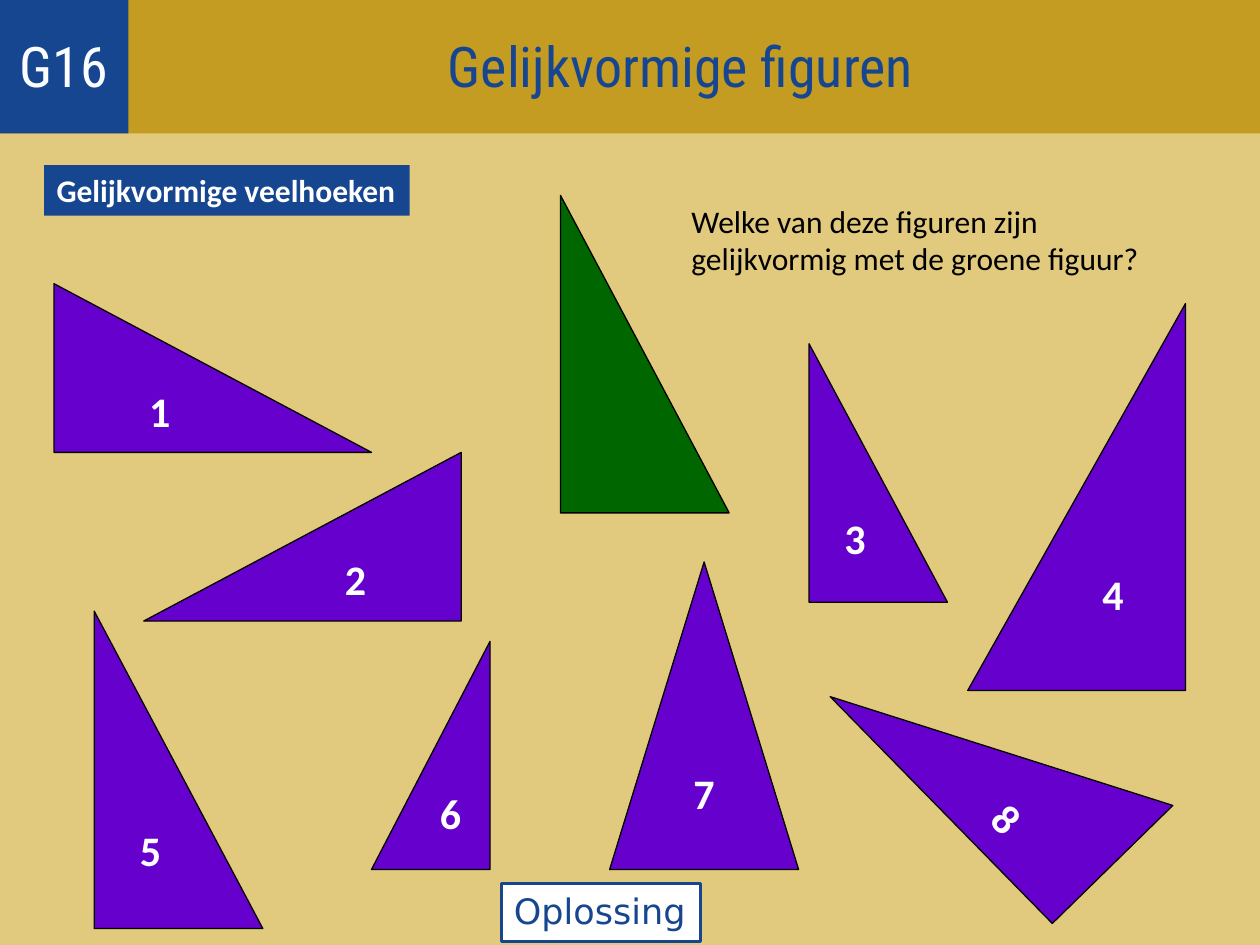
from pptx import Presentation
from pptx.dml.color import RGBColor
from pptx.enum.shapes import MSO_SHAPE
from pptx.enum.text import MSO_ANCHOR, MSO_AUTO_SIZE, PP_ALIGN
from pptx.util import Cm, Pt

NAVY = RGBColor(0x17, 0x46, 0x91)
GOLD = RGBColor(0xC5, 0x9C, 0x22)
SAND = RGBColor(0xE1, 0xCA, 0x7D)
PURPLE = RGBColor(0x66, 0x00, 0xCC)
GREEN = RGBColor(0x00, 0x66, 0x00)
WHITE = RGBColor(0xFF, 0xFF, 0xFF)
OFF_WHITE = RGBColor(0xFC, 0xFD, 0xFE)
BLACK = RGBColor(0x00, 0x00, 0x00)

RIGHT, ISOSCELES = MSO_SHAPE.RIGHT_TRIANGLE, MSO_SHAPE.ISOSCELES_TRIANGLE

TRIANGLES = [
    ("2", RIGHT, (2.9, 9.12, 6.4, 3.4), True, 0),
    ("", RIGHT, (11.3, 3.94, 3.4, 6.4), False, 0),
    ("5", RIGHT, (1.9, 12.32, 3.4, 6.4), False, 0),
    ("4", RIGHT, (19.51, 6.12, 4.39, 7.8), True, 0),
    ("3", RIGHT, (16.31, 6.93, 2.79, 5.21), False, 0),
    ("1", RIGHT, (1.09, 5.72, 6.4, 3.4), False, 0),
    ("7", ISOSCELES, (12.29, 11.33, 3.81, 6.2), False, 0),
    ("6", RIGHT, (7.49, 12.93, 2.39, 4.6), True, 0),
    ("8", RIGHT, (16.99, 13.44, 6.4, 3.4), True, 45.6),
]


def add_text(sp, text, size, font, color, bold=False, align=PP_ALIGN.LEFT,
             anchor=MSO_ANCHOR.TOP, wrap=False, grow=False):
    tf = sp.text_frame
    tf.text = text
    tf.word_wrap = wrap
    tf.vertical_anchor = anchor
    if grow:
        tf.auto_size = MSO_AUTO_SIZE.SHAPE_TO_FIT_TEXT
    for p in tf.paragraphs:
        p.alignment = align
        for r in p.runs:
            r.font.size = Pt(size)
            r.font.name = font
            r.font.bold = bold
            r.font.color.rgb = color


def add_figure(shapes, kind, box, fill, line=None, width=0.75):
    sp = shapes.add_shape(kind, *map(Cm, box))
    sp.shadow.inherit = False
    sp.fill.solid()
    sp.fill.fore_color.rgb = fill
    if line is None:
        sp.line.fill.background()
    else:
        sp.line.color.rgb = line
        sp.line.width = Pt(width)
    return sp


def add_triangle(shapes, number, kind, box, mirrored, angle):
    sp = add_figure(shapes, kind, box, PURPLE if number else GREEN, BLACK)
    sp.rotation = angle
    if mirrored:
        sp.element.spPr.get_or_add_xfrm().set("flipH", "1")
    if number:
        add_text(sp, number, 24, "Calibri", WHITE, bold=True,
                 align=PP_ALIGN.CENTER, anchor=MSO_ANCHOR.MIDDLE)


def add_question(shapes, box):
    sp = shapes.add_textbox(*map(Cm, box))
    add_text(sp, "Welke van deze figuren zijn\ngelijkvormig met de groene figuur?",
             18, "Calibri", BLACK, wrap=True, grow=True)


def add_button(shapes, box):
    sp = add_figure(shapes, MSO_SHAPE.RECTANGLE, box, WHITE, NAVY, 2)
    add_text(sp, "Oplossing", 20, "DejaVu Sans", NAVY, grow=True)


def add_label(shapes, box):
    sp = add_figure(shapes, MSO_SHAPE.RECTANGLE, box, NAVY)
    add_text(sp, "Gelijkvormige veelhoeken", 18, "Calibri", WHITE, bold=True, grow=True)


def add_header(shapes, box):
    left, top, width, height = box
    code_width = 2.59
    group = shapes.add_group_shape()
    bar = add_figure(group.shapes, MSO_SHAPE.RECTANGLE, box, GOLD)
    code = add_figure(group.shapes, MSO_SHAPE.RECTANGLE,
                      (left, top, code_width, height), NAVY)
    for sp, text, color in ((bar, "Gelijkvormige figuren", NAVY), (code, "G16", OFF_WHITE)):
        add_text(sp, text, 32, "Roboto Condensed", color, align=PP_ALIGN.CENTER,
                 anchor=MSO_ANCHOR.MIDDLE, wrap=True)
    bar.text_frame.margin_left = Cm(2.3)


def main():
    prs = Presentation()
    prs.slide_width, prs.slide_height = Cm(25.4), Cm(19.05)
    s = prs.slides.add_slide(prs.slide_layouts[6])
    s.background.fill.solid()
    s.background.fill.fore_color.rgb = SAND
    for triangle in TRIANGLES:
        add_triangle(s.shapes, *triangle)
    add_question(s.shapes, (13.69, 3.94, 9.86, 1.78))
    add_button(s.shapes, (10.11, 17.81, 4.01, 1.17))
    add_label(s.shapes, (0.89, 3.33, 7.37, 1.02))
    add_header(s.shapes, (0, -0.08, 25.4, 2.77))
    prs.save("out.pptx")


if __name__ == "__main__":
    main()
